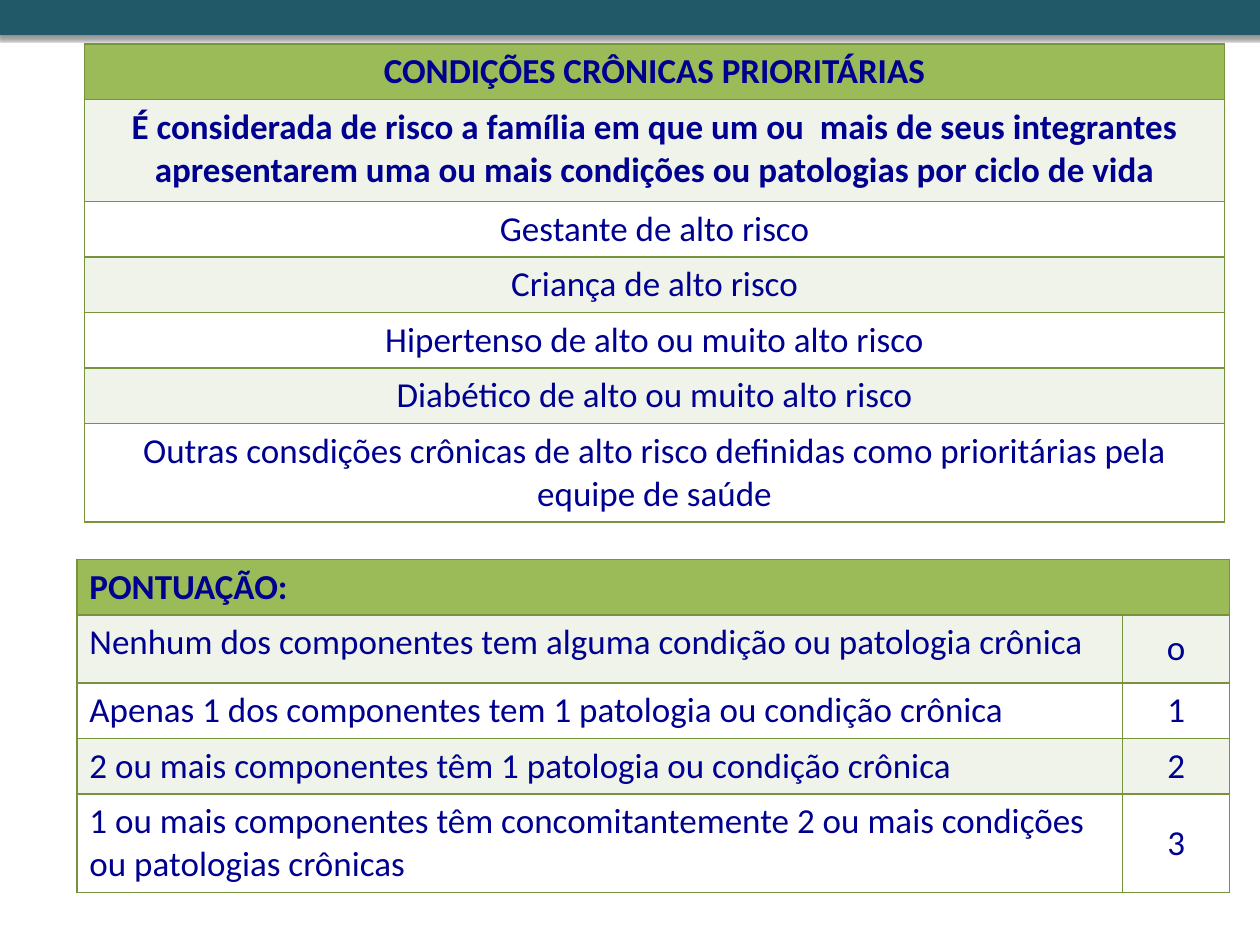
from dataclasses import dataclass

import pptx
import pptx.dml.color
import pptx.enum.shapes
import pptx.enum.text
import pptx.oxml
import pptx.oxml.ns
import pptx.util
from pptx.util import Inches

ALIGN = pptx.enum.text.PP_ALIGN
ANCHOR = pptx.enum.text.MSO_ANCHOR


@dataclass(frozen=True)
class Theme:
    bar: str = "215968"
    header: str = "9BBB59"
    band: str = "EFF3EA"
    plain: str = "FFFFFF"
    border: str = "77933C"
    text: str = "000090"
    font: str = "Calibri"
    size: int = 20
    border_width: int = 1


THEME = Theme()
LINE_ROW, TALL_ROW = 0.44, 0.78

CONDITIONS = [
    "CONDIÇÕES CRÔNICAS PRIORITÁRIAS",
    "É considerada de risco a família em que um ou  mais de seus integrantes "
    "apresentarem uma ou mais condições ou patologias por ciclo de vida",
    "Gestante de alto risco",
    "Criança de alto risco",
    "Hipertenso de alto ou muito alto risco",
    "Diabético de alto ou muito alto risco",
    "Outras consdições crônicas de alto risco definidas como prioritárias "
    "pela equipe de saúde",
]
SCORES = [
    ("PONTUAÇÃO:", ""),
    ("Nenhum dos componentes tem alguma condição ou patologia crônica", "o"),
    ("Apenas 1 dos componentes tem 1 patologia ou condição crônica", "1"),
    ("2 ou mais componentes têm 1 patologia ou condição crônica", "2"),
    ("1 ou mais componentes têm concomitantemente 2 ou mais condições "
     "ou patologias crônicas", "3"),
]


def color(value):
    return pptx.dml.color.RGBColor.from_string(value)


def add_top_bar(slide):
    shape = slide.shapes.add_shape(
        pptx.enum.shapes.MSO_SHAPE.RECTANGLE,
        Inches(-0.02), Inches(0), Inches(10.04), Inches(0.28))
    shape.fill.solid()
    shape.fill.fore_color.rgb = color(THEME.bar)
    shape.line.fill.background()
    # Soft shadow straight below the bar
    shape.shadow.inherit = False
    effects = shape._element.spPr.find(pptx.oxml.ns.qn("a:effectLst"))
    distance = pptx.util.Pt(2)
    effects.append(pptx.oxml.parse_xml(
        f'<a:outerShdw {pptx.oxml.ns.nsdecls("a")} blurRad="{distance}" '
        f'dist="{distance}" dir="5400000" rotWithShape="0">'
        '<a:srgbClr val="000000"><a:alpha val="40000"/></a:srgbClr>'
        '</a:outerShdw>'))


def set_borders(cell):
    properties = cell._tc.get_or_add_tcPr()
    for position, side in enumerate(("lnL", "lnR", "lnT", "lnB")):
        properties.insert(position, pptx.oxml.parse_xml(
            f'<a:{side} {pptx.oxml.ns.nsdecls("a")} '
            f'w="{pptx.util.Pt(THEME.border_width)}"><a:solidFill>'
            f'<a:srgbClr val="{THEME.border}"/></a:solidFill></a:{side}>'))


def format_cell(cell, fill):
    cell.fill.solid()
    cell.fill.fore_color.rgb = color(fill)
    set_borders(cell)


def write_cell(cell, text, bold, alignment, anchor):
    cell.vertical_anchor = anchor
    paragraph = cell.text_frame.paragraphs[0]
    paragraph.alignment = alignment
    run = paragraph.add_run()
    run.text = text
    run.font.name = THEME.font
    run.font.size = pptx.util.Pt(THEME.size)
    run.font.bold = bold
    run.font.color.rgb = color(THEME.text)


def add_banded_table(slide, left, top, widths, heights, rows, styles, bold_rows):
    """Styles hold one (alignment, anchor) pair per column."""
    table = slide.shapes.add_table(
        len(heights), len(widths), Inches(left), Inches(top),
        Inches(sum(widths)), Inches(sum(heights))).table
    for column, width in zip(table.columns, widths):
        column.width = Inches(width)
    for row, height in zip(table.rows, heights):
        row.height = Inches(height)
    if len(widths) > 1:
        table.cell(0, 0).merge(table.cell(0, len(widths) - 1))
    for row_index, texts in enumerate(rows):
        band = THEME.band if row_index % 2 else THEME.plain
        fill = band if row_index else THEME.header
        for column_index, text in enumerate(texts):
            cell = table.cell(row_index, column_index)
            format_cell(cell, fill)
            if text:
                write_cell(cell, text, row_index < bold_rows,
                           *styles[column_index])


def main():
    presentation = pptx.Presentation()
    presentation.slide_width = Inches(10)
    presentation.slide_height = Inches(7.5)
    slide = presentation.slides.add_slide(presentation.slide_layouts[6])

    add_top_bar(slide)

    # Priority chronic conditions
    add_banded_table(
        slide, 0.67, 0.35, [9.05], [LINE_ROW, 0.81] + [LINE_ROW] * 4 + [TALL_ROW],
        [(text,) for text in CONDITIONS], [(ALIGN.CENTER, ANCHOR.TOP)],
        bold_rows=2)

    # Scoring
    add_banded_table(
        slide, 0.61, 4.44, [8.3, 0.85],
        [LINE_ROW, 0.54, LINE_ROW, LINE_ROW, TALL_ROW], SCORES,
        [(ALIGN.LEFT, ANCHOR.TOP), (ALIGN.CENTER, ANCHOR.MIDDLE)],
        bold_rows=1)

    presentation.save("out.pptx")


if __name__ == "__main__":
    main()
